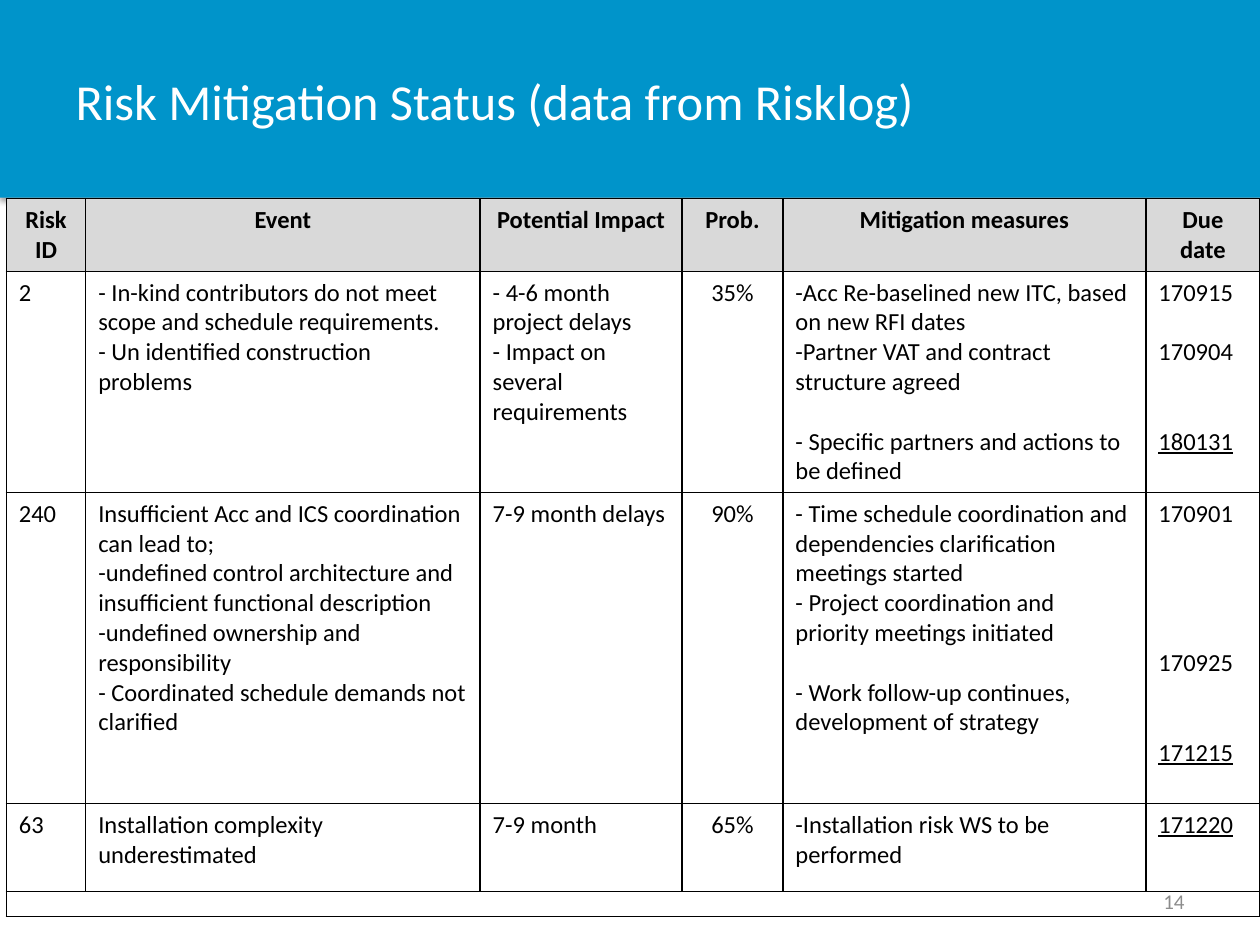
from lxml.etree import SubElement
from pptx import Presentation
from pptx.dml.color import RGBColor
from pptx.enum.shapes import MSO_SHAPE
from pptx.enum.text import MSO_ANCHOR, PP_ALIGN
from pptx.oxml.ns import qn
from pptx.util import Pt

TITLE = "Risk Mitigation Status (data from Risklog)"
PAGE_NUMBER = "14"
FONT = "Calibri"
LINE_HEIGHT = 17.09
COLUMN_WIDTHS = [45.4, 225.4, 115.4, 57.6, 207.4, 65.2]
ROW_HEIGHTS = [41.6, 126.4, 177.8, 50.2, 14.3]
CENTRED_COLUMN = 3

HEADERS = ["Risk ID", "Event", "Potential Impact", "Prob.", "Mitigation measures", "Due date"]
# Each paragraph is (text, free lines above it).
RISKS = [
    [
        [("2", 0)],
        [("- In-kind contributors do not meet scope and schedule requirements.", 0),
         ("- Un identified construction problems", 0)],
        [("- 4-6 month project delays", 0), ("- Impact on several requirements", 0)],
        [("35%", 0)],
        [("-Acc Re-baselined new ITC, based on new RFI dates", 0),
         ("-Partner VAT and contract structure agreed", 0),
         ("- Specific partners and actions to be defined", 1)],
        [("170915", 0), ("170904", 1), ("180131", 2)],
    ],
    [
        [("240", 0)],
        [("Insufficient Acc and ICS coordination can lead to;", 0),
         ("-undefined control architecture and insufficient functional description", 0),
         ("-undefined ownership and responsibility", 0),
         ("- Coordinated schedule demands not clarified", 0)],
        [("7-9 month delays", 0)],
        [("90%", 0)],
        [("- Time schedule coordination and dependencies clarification meetings started", 0),
         ("- Project coordination and priority meetings initiated", 0),
         ("- Work follow-up continues, development of strategy", 1)],
        [("170901", 0), ("170925", 4), ("171215", 2)],
    ],
    [
        [("63", 0)],
        [("Installation complexity underestimated", 0)],
        [("7-9 month", 0)],
        [("65%", 0)],
        [("-Installation risk WS to be performed", 0)],
        [("171220", 0)],
    ],
]
OPEN_DATES = {"180131", "171215", "171220"}


def color(value):
    return RGBColor.from_string(value)


def style(para, size, value, bold=False, align=PP_ALIGN.LEFT):
    para.alignment = align
    font = para.font
    font.name, font.size, font.bold = FONT, Pt(size), bold
    font.color.rgb = color(value)


def add_shadow(shape):
    effects = shape._element.spPr.find(qn("a:effectLst"))
    shadow = SubElement(effects, qn("a:outerShdw"), blurRad=str(Pt(3.1)),
                        dist=str(Pt(1.8)), dir="5400000", rotWithShape="0")
    black = SubElement(shadow, qn("a:srgbClr"), val="000000")
    SubElement(black, qn("a:alpha"), val="35000")


def add_borders(cell):
    properties = cell._tc.get_or_add_tcPr()
    for side in ("lnL", "lnR", "lnT", "lnB"):
        line = SubElement(properties, qn(f"a:{side}"), w=str(Pt(1)))
        fill = SubElement(line, qn("a:solidFill"))
        SubElement(fill, qn("a:srgbClr"), val="000000")


def fill_cell(cell, paragraphs, bold, align):
    frame = cell.text_frame
    for index, (text, gap) in enumerate(paragraphs):
        para = frame.paragraphs[0] if index == 0 else frame.add_paragraph()
        para.text = text
        style(para, 14, "000000", bold, align)
        para.font.underline = text in OPEN_DATES
        if gap:
            para.space_before = Pt(round(gap * LINE_HEIGHT, 1))


def add_banner(page):
    banner = page.shapes.add_shape(MSO_SHAPE.RECTANGLE, 0, 0, Pt(720), Pt(113))
    banner.fill.solid()
    banner.fill.fore_color.rgb = color("0094CA")
    banner.line.fill.background()
    banner.shadow.inherit = False
    add_shadow(banner)
    page.shapes._spTree.insert(2, banner._element)


def add_title(page):
    title = page.shapes.title
    title.left, title.top, title.width, title.height = Pt(36), Pt(21.6), Pt(562.3), Pt(90)
    frame = title.text_frame
    frame.text = TITLE
    frame.vertical_anchor = MSO_ANCHOR.MIDDLE
    frame.margin_bottom = Pt(21.6)
    style(frame.paragraphs[0], 28.8, "FFFFFF")


def add_page_number(page):
    box = page.shapes.add_textbox(Pt(516), Pt(500.4), Pt(168), Pt(28.8))
    frame = box.text_frame
    frame.word_wrap = True
    frame.vertical_anchor = MSO_ANCHOR.MIDDLE
    frame.text = PAGE_NUMBER
    style(frame.paragraphs[0], 12, "8C8C8C", align=PP_ALIGN.RIGHT)


def add_risk_table(page):
    table = page.shapes.add_table(
        len(ROW_HEIGHTS), len(COLUMN_WIDTHS), Pt(3.6), Pt(113.5),
        Pt(sum(COLUMN_WIDTHS)), Pt(sum(ROW_HEIGHTS))).table
    table.first_row = table.horz_banding = False
    for column, width in zip(table.columns, COLUMN_WIDTHS):
        column.width = Pt(width)
    for row, height in zip(table.rows, ROW_HEIGHTS):
        row.height = Pt(height)

    content = [[[(header, 0)] for header in HEADERS]] + RISKS
    for row_index, row in enumerate(table.rows):
        is_header = row_index == 0
        for column_index, cell in enumerate(row.cells):
            add_borders(cell)
            if is_header:
                cell.fill.solid()
                cell.fill.fore_color.rgb = color("D9D9D9")
            else:
                cell.fill.background()
            if row_index < len(content):
                centred = is_header or column_index == CENTRED_COLUMN
                fill_cell(cell, content[row_index][column_index], is_header,
                          PP_ALIGN.CENTER if centred else PP_ALIGN.LEFT)
            else:
                cell.margin_top = cell.margin_bottom = 0
                SubElement(cell.text_frame.paragraphs[0]._p, qn("a:endParaRPr"), sz="800")
    last = len(ROW_HEIGHTS) - 1
    table.cell(last, 0).merge(table.cell(last, len(COLUMN_WIDTHS) - 1))


def main():
    deck = Presentation()
    deck.slide_width, deck.slide_height = Pt(720), Pt(540)
    page = deck.slides.add_slide(deck.slide_layouts[5])
    add_banner(page)
    add_title(page)
    add_page_number(page)
    add_risk_table(page)
    deck.save("out.pptx")


if __name__ == "__main__":
    main()
